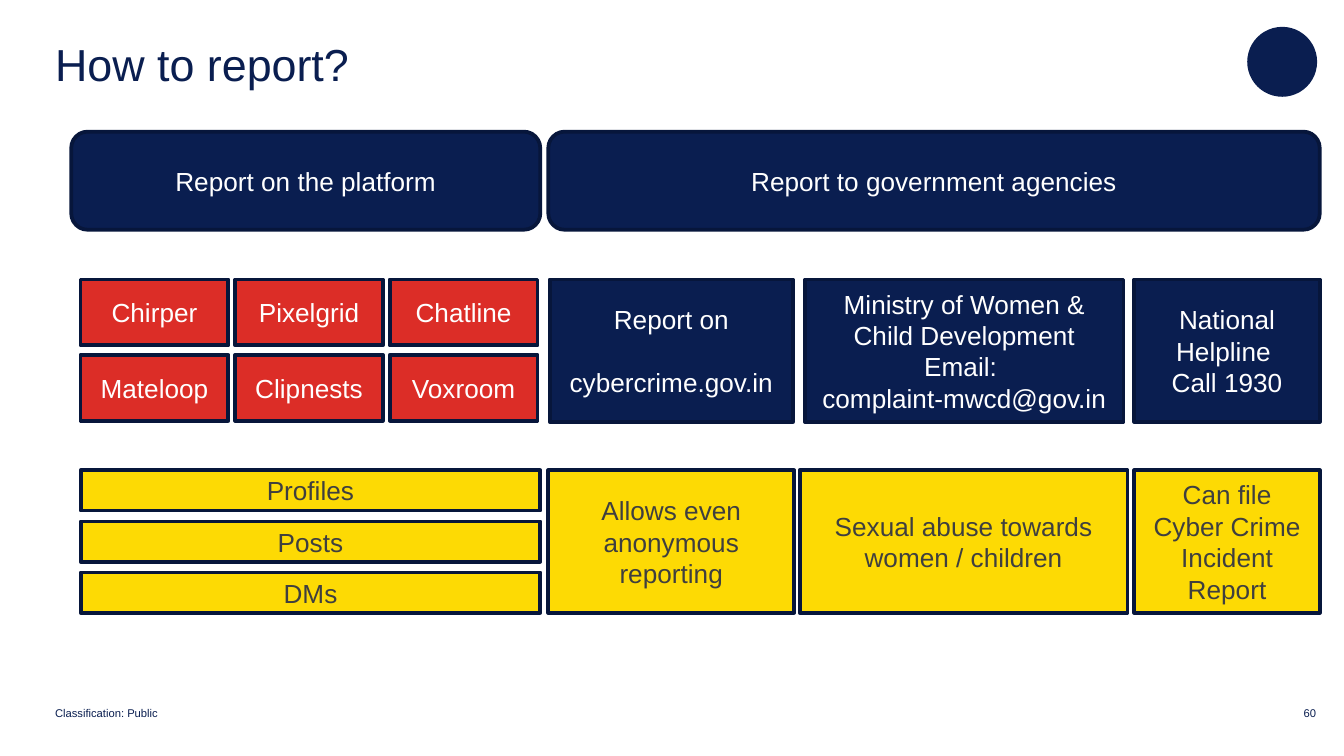
from pptx import Presentation
from pptx.dml.color import RGBColor
from pptx.enum.shapes import MSO_SHAPE
from pptx.enum.text import MSO_ANCHOR, MSO_AUTO_SIZE, PP_ALIGN
from pptx.util import Inches, Pt

NAVY = RGBColor(0x0A, 0x1E, 0x50)
OUTLINE = RGBColor(0x07, 0x16, 0x3B)
RED = RGBColor(0xDC, 0x2D, 0x27)
YELLOW = RGBColor(0xFD, 0xDA, 0x04)
WHITE = RGBColor(0xFF, 0xFF, 0xFF)
GREY = RGBColor(0x3F, 0x3F, 0x3F)

HEADING = "How to report?"
ROUTES = [("Report on the platform", 0.53, 3.49), ("Report to government agencies", 4.08, 5.74)]
PLATFORMS = [["Chirper", "Pixelgrid", "Chatline"], ["Mateloop", "Clipnests", "Voxroom"]]
REPORTABLE = ["Profiles", "Posts", "DMs"]
AGENCIES = [
    (["Report on", "cybercrime.gov.in"], 4.09, 1.81, 17),
    (["Ministry of Women & Child Development", "Email: ", "complaint-mwcd@gov.in"], 5.99, 2.37, 0),
    (["National Helpline ", "Call 1930"], 8.44, 1.38, 0),
]
USES = [
    ("Allows even anonymous reporting", 4.08, 1.83),
    ("Sexual abuse towards women / children", 5.95, 2.44),
    ("Can file Cyber Crime Incident Report", 8.44, 1.38),
]
FOOTER = [("Classification: Public", 0.41, 0.78), ("60", 9.7, 0.1)]

SLIDE_WIDTH = 10
SLIDE_HEIGHT = SLIDE_WIDTH * 9 / 16
ROUTE_TOP, AGENCY_TOP, USE_TOP = 0.98, 2.08, 3.5
CARD_HEIGHT = 1.06
PLATFORM_LEFT = 0.6
NO_INSETS = dict.fromkeys(("margin_left", "margin_top", "margin_right", "margin_bottom"), 0)


def apply(target, formats):
    for name, value in formats.items():
        setattr(target, name, value)


def style(paragraph, size, color, align):
    paragraph.alignment = align
    apply(paragraph.font, {"name": "Arial", "size": Pt(size)})
    paragraph.font.color.rgb = color


def add_card(slide, lines, left, top, width, height, fill, color=WHITE,
             kind=MSO_SHAPE.RECTANGLE, gap=0):
    card = slide.shapes.add_shape(kind, Inches(left), Inches(top), Inches(width), Inches(height))
    card.shadow.inherit = False
    card.fill.solid()
    card.fill.fore_color.rgb = fill
    card.line.color.rgb = OUTLINE
    card.line.width = Pt(2)
    frame = card.text_frame
    apply(frame, {"word_wrap": True, "vertical_anchor": MSO_ANCHOR.MIDDLE})
    for index, line in enumerate(lines):
        paragraph = frame.add_paragraph() if index else frame.paragraphs[0]
        paragraph.text = line
        if index and gap:
            paragraph.space_before = Pt(gap)
        style(paragraph, 14, color, PP_ALIGN.CENTER)


def add_heading(slide):
    title = slide.shapes.title
    apply(title, {"left": Inches(0.41), "top": Inches(0.18),
                  "width": Inches(8.77), "height": Inches(0.59)})
    title.text = HEADING
    apply(title.text_frame, {**NO_INSETS, "vertical_anchor": MSO_ANCHOR.MIDDLE,
                             "auto_size": MSO_AUTO_SIZE.NONE})
    style(title.text_frame.paragraphs[0], 24, NAVY, PP_ALIGN.LEFT)


def add_emblem(slide):
    emblem = slide.shapes.add_shape(MSO_SHAPE.OVAL, Inches(9.28), Inches(0.2),
                                    Inches(0.52), Inches(0.52))
    emblem.shadow.inherit = False
    emblem.fill.solid()
    emblem.fill.fore_color.rgb = NAVY
    emblem.line.fill.background()


def add_footer(slide):
    for label, left, width in FOOTER:
        box = slide.shapes.add_textbox(Inches(left), Inches(5.27), Inches(width), Inches(0.09))
        apply(box.text_frame, {**NO_INSETS, "word_wrap": False})
        paragraph = box.text_frame.paragraphs[0]
        paragraph.text = label
        paragraph.line_spacing = 0.85
        style(paragraph, 6, NAVY, PP_ALIGN.LEFT)


def main():
    deck = Presentation()
    apply(deck, {"slide_width": Inches(SLIDE_WIDTH), "slide_height": Inches(SLIDE_HEIGHT)})
    slide = deck.slides.add_slide(deck.slide_layouts[5])
    add_emblem(slide)
    add_footer(slide)
    add_heading(slide)
    for route, left, width in ROUTES:
        add_card(slide, [route], left, ROUTE_TOP, width, 0.73, NAVY,
                 kind=MSO_SHAPE.ROUNDED_RECTANGLE)
    for row, names in enumerate(PLATFORMS):
        for column, name in enumerate(names):
            add_card(slide, [name], PLATFORM_LEFT + 1.15 * column,
                     AGENCY_TOP + 0.56 * row, 1.1, 0.49, RED)
    for row, item in enumerate(REPORTABLE):
        add_card(slide, [item], PLATFORM_LEFT, USE_TOP + 0.38 * row, 3.42, 0.3, YELLOW, GREY)
    for lines, left, width, gap in AGENCIES:
        add_card(slide, lines, left, AGENCY_TOP, width, CARD_HEIGHT, NAVY, gap=gap)
    for use, left, width in USES:
        add_card(slide, [use], left, USE_TOP, width, CARD_HEIGHT, YELLOW, GREY)
    deck.save("out.pptx")


if __name__ == "__main__":
    main()
